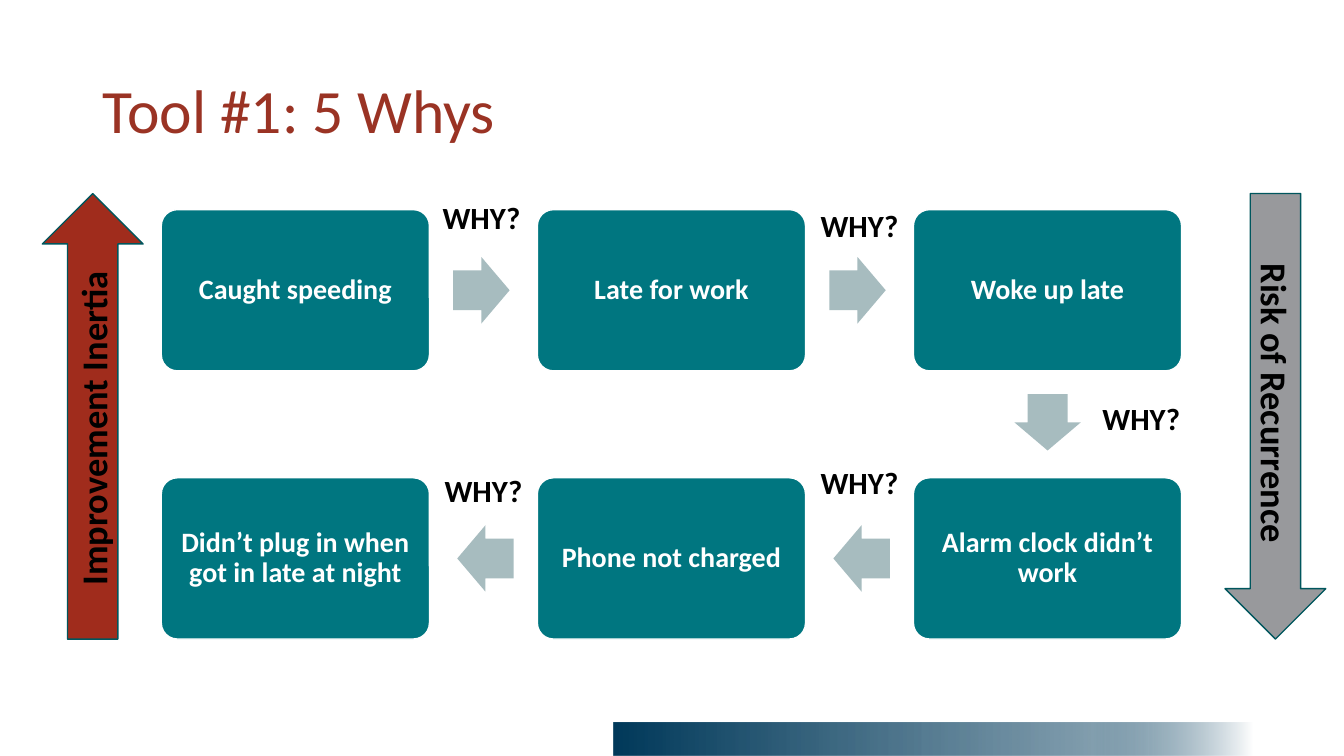
import math
from itertools import pairwise

from lxml import etree
from pptx import Presentation
from pptx import util as u
from pptx.dml.color import RGBColor
from pptx.enum import shapes, text
from pptx.oxml.ns import qn

WIDTH, HEIGHT = 13.33, 7.5
FONT = "Calibri"
TEAL, WHITE, BLACK = "007680", "FFFFFF", "000000"
CARD_W, CARD_H = 2.66, 1.6
COLUMN_STEP, ROW_STEP = 3.73, 2.66
ARROW_W, ARROW_H = 0.56, 0.66
ARROW_SETBACK = 0.02

# Column, row and wording of each card, in reading order of the chain
CHAIN = [
    (0, 0, "Caught speeding"),
    (1, 0, "Late for work"),
    (2, 0, "Woke up late"),
    (2, 1, "Alarm clock didn’t work"),
    (1, 1, "Phone not charged"),
    (0, 1, "Didn’t plug in when got in late at night"),
]
# Distance of each WHY? from the middle of its gap
WHY_OFFSETS = [(-0.02, -0.72), (0, -0.64), (0.93, -0.06), (0, -0.75), (0, -0.67)]


def color(hex_string):
    return RGBColor.from_string(hex_string)


def write(shape, words, size, hex_color, bold=True, align=text.PP_ALIGN.CENTER,
          anchor=text.MSO_ANCHOR.MIDDLE, spacing=1.0):
    frame = shape.text_frame
    frame.word_wrap = True
    frame.vertical_anchor = anchor
    paragraph = frame.paragraphs[0]
    paragraph.text = words
    paragraph.alignment = align
    paragraph.line_spacing = spacing
    font = paragraph.font
    font.name, font.size, font.bold = FONT, u.Pt(size), bold
    font.color.rgb = color(hex_color)


def add_block(slide, kind, box, fill, line=None, adjustments=()):
    block = slide.shapes.add_shape(kind, *map(u.Inches, box))
    block.shadow.inherit = False
    block.fill.solid()
    block.fill.fore_color.rgb = color(fill)
    if line:
        block.line.color.rgb = color(line)
        block.line.width = u.Pt(1)
    else:
        block.line.fill.background()
    for index, value in enumerate(adjustments):
        block.adjustments[index] = value
    return block


def add_label(slide, center, size, words, points, **style):
    (x, y), (w, h) = center, size
    label = slide.shapes.add_textbox(*map(u.Inches, (x - w / 2, y - h / 2, w, h)))
    write(label, words, points, BLACK, **style)
    return label


def add_footer_band(slide, box):
    """Bar that fades from navy to white."""
    band = add_block(slide, shapes.MSO_SHAPE.RECTANGLE, box, WHITE)
    band.fill.gradient()
    band.fill.gradient_angle = 0
    stops = band._element.spPr.find(qn("a:gradFill")).find(qn("a:gsLst"))
    stops.clear()
    for position, tint, opacity in [(0, "003A5B", 100), (45, "003A5B", 69),
                                    (75, "003A5B", 49), (100, WHITE, 100)]:
        stop = etree.SubElement(stops, qn("a:gs"), pos=str(position * 1000))
        tone = etree.SubElement(stop, qn("a:srgbClr"), val=tint)
        etree.SubElement(tone, qn("a:alpha"), val=str(opacity * 1000))


def add_title(slide, box):
    title = slide.shapes.add_textbox(*map(u.Inches, box))
    write(title, "Tool #1: 5 Whys", 44, "9A3324", bold=False,
          align=text.PP_ALIGN.LEFT, spacing=0.9)


def add_chain(slide, left, top):
    """Cards in a loop of two rows, with an arrow and a WHY? in each gap."""
    centers = []
    for column, row, words in CHAIN:
        x, y = left + column * COLUMN_STEP, top + row * ROW_STEP
        card = add_block(slide, shapes.MSO_SHAPE.ROUNDED_RECTANGLE,
                         (x, y, CARD_W, CARD_H), TEAL, WHITE, [0.1])
        frame = card.text_frame
        frame.margin_left = frame.margin_right = u.Inches(0.08)
        frame.margin_top = frame.margin_bottom = u.Inches(0.08)
        write(card, words, 20, WHITE, spacing=0.9)
        centers.append((x + CARD_W / 2, y + CARD_H / 2))

    for ((x1, y1), (x2, y2)), (dx, dy) in zip(pairwise(centers), WHY_OFFSETS):
        middle_x, middle_y = (x1 + x2) / 2, (y1 + y2) / 2
        angle = math.atan2(y2 - y1, x2 - x1)
        arrow_x = middle_x - ARROW_SETBACK * math.cos(angle)
        arrow_y = middle_y - ARROW_SETBACK * math.sin(angle)
        arrow = add_block(slide, shapes.MSO_SHAPE.RIGHT_ARROW,
                          (arrow_x - ARROW_W / 2, arrow_y - ARROW_H / 2, ARROW_W, ARROW_H),
                          "A7BCBF", adjustments=[0.6, 0.5])
        arrow.rotation = math.degrees(angle)
        add_label(slide, (middle_x + dx, middle_y + dy), (1.34, 0.47), "WHY?", 22,
                  anchor=text.MSO_ANCHOR.TOP)


def add_side_arrow(slide, box, kind, fill, words, rotation, label_shift):
    left, top, width, height = box
    add_block(slide, kind, box, fill, "00565D", [0.5, 0.5])
    label = add_label(slide, (left + width / 2, top + height / 2 + label_shift),
                      (4.17, 0.5), words, 26)
    label.rotation = rotation


def build_slide(deck):
    slide = deck.slides.add_slide(deck.slide_layouts[6])
    add_footer_band(slide, (6.09, 7.17, 6.33, 0.33))
    add_title(slide, (0.92, 0.4, 11.5, 1.45))
    add_chain(slide, 1.6, 2.08)
    add_side_arrow(slide, (0.42, 1.92, 1, 4.42), shapes.MSO_SHAPE.UP_ARROW,
                   "A02C1C", "Improvement Inertia", 270, 0.12)
    add_side_arrow(slide, (12.15, 1.92, 1, 4.42), shapes.MSO_SHAPE.DOWN_ARROW,
                   "98999C", "Risk of Recurrence", 90, -0.13)


def main():
    deck = Presentation()
    deck.slide_width, deck.slide_height = u.Inches(WIDTH), u.Inches(HEIGHT)
    build_slide(deck)
    deck.save("out.pptx")


if __name__ == "__main__":
    main()
